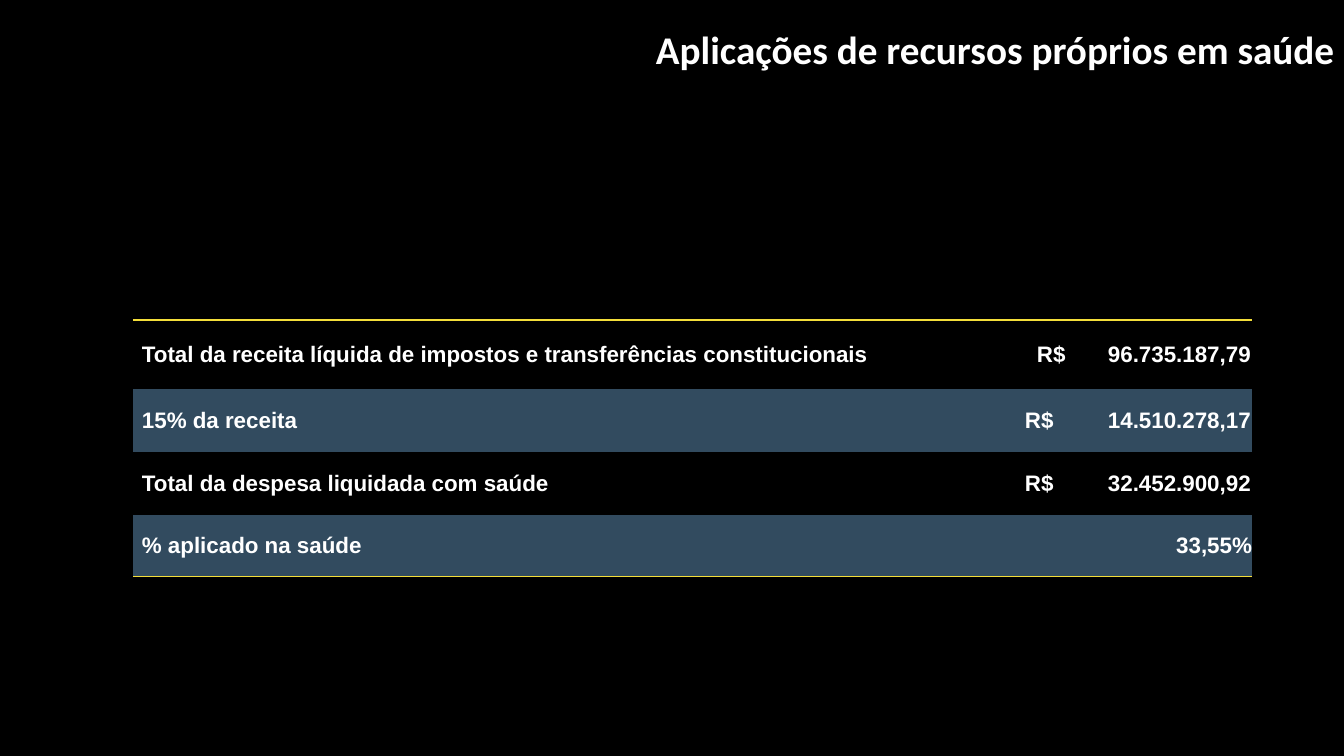
from pptx import Presentation
from pptx.dml.color import RGBColor
from pptx.enum.text import MSO_ANCHOR, PP_ALIGN
from pptx.oxml import parse_xml
from pptx.oxml.ns import nsdecls
from pptx.util import Pt

SCALE = 914400 / 100.8
PLAIN = "{2D5ABB26-0587-4C30-8999-92F81FD0307C}"
WHITE, BLACK, BLUE, GOLD = "FFFFFF", "000000", "324B5F", "F4DE3A"


def px(n):
    return round(n * SCALE)


def color(code):
    return RGBColor.from_string(code)


def write(frame, text, font="Arial", size=16, align=PP_ALIGN.LEFT, tab=None):
    """Fill a text frame with one bold white paragraph; tab is a stop in px."""
    para = frame.paragraphs[0]
    para.alignment = align
    if tab:
        para._p.get_or_add_pPr().append(parse_xml(
            f'<a:tabLst {nsdecls("a")}><a:tab pos="{px(tab)}" algn="l"/></a:tabLst>'))
    run = para.add_run()
    run.text = text
    run.font.name = font
    run.font.size = Pt(size)
    run.font.bold = True
    run.font.color.rgb = color(WHITE)


class Deck:
    def __init__(self):
        self.prs = Presentation()
        self.prs.slide_width, self.prs.slide_height = px(1344), px(756)
        self.slide = self.prs.slides.add_slide(self.prs.slide_layouts[6])
        fill = self.slide.background.fill
        fill.solid()
        fill.fore_color.rgb = color(BLACK)

    def title(self, text, x, y, w, h):
        box = self.slide.shapes.add_textbox(px(x), px(y), px(w), px(h))
        box.text_frame.word_wrap = True
        write(box.text_frame, text, font="Calibri", size=28, align=PP_ALIGN.RIGHT)

    def grid(self, x, y, cols, rows):
        """Add an unstyled table with the given column widths and row heights."""
        frame = self.slide.shapes.add_table(
            len(rows), len(cols), px(x), px(y), px(sum(cols)), px(sum(rows)))
        frame._element.xpath(".//a:tableStyleId")[0].text = PLAIN
        table = frame.table
        table.first_row = table.horz_banding = False
        for col, w in zip(table.columns, cols):
            col.width = px(w)
        for row, h in zip(table.rows, rows):
            row.height = px(h)
        return table

    def cell(self, cell, text, left=0, fill=None, edge=None, **style):
        """Format a cell; edge is T or B for a gold line above or below."""
        cell.margin_left = px(left)
        cell.margin_right = cell.margin_top = cell.margin_bottom = 0
        cell.vertical_anchor = MSO_ANCHOR.MIDDLE
        if edge:
            cell._tc.get_or_add_tcPr().append(parse_xml(
                f'<a:ln{edge} {nsdecls("a")} w="{Pt(1)}"><a:solidFill>'
                f'<a:srgbClr val="{GOLD}"/></a:solidFill></a:ln{edge}>'))
        if fill:
            cell.fill.solid()
            cell.fill.fore_color.rgb = color(fill)
        else:
            cell.fill.background()
        write(cell.text_frame, text, **style)


def main():
    deck = Deck()
    deck.title("Aplicações de recursos próprios em saúde", 269, 20, 1075, 57)
    # Label, amount, left edge of the currency sign within its cell
    rows = [
        ("Total da receita líquida de impostos e transferências constitucionais",
         "96.735.187,79", 129),
        ("15% da receita", "14.510.278,17", 117),
        ("Total da despesa liquidada com saúde", "32.452.900,92", 117),
        ("% aplicado na saúde", "33,55%", None),
    ]
    edges = {0: "T", len(rows) - 1: "B"}
    table = deck.grid(133, 320, [775, 344], [69, 63, 63, 62])
    for i, (label, value, sign) in enumerate(rows):
        look = dict(fill=BLUE if i % 2 else None, edge=edges.get(i))
        deck.cell(table.cell(i, 0), label, left=9, **look)
        if sign:
            deck.cell(table.cell(i, 1), f"R$\t{value}", left=sign,
                      tab=200 - sign, **look)
        else:
            deck.cell(table.cell(i, 1), value, align=PP_ALIGN.RIGHT, **look)
    deck.prs.save("out.pptx")


if __name__ == "__main__":
    main()
